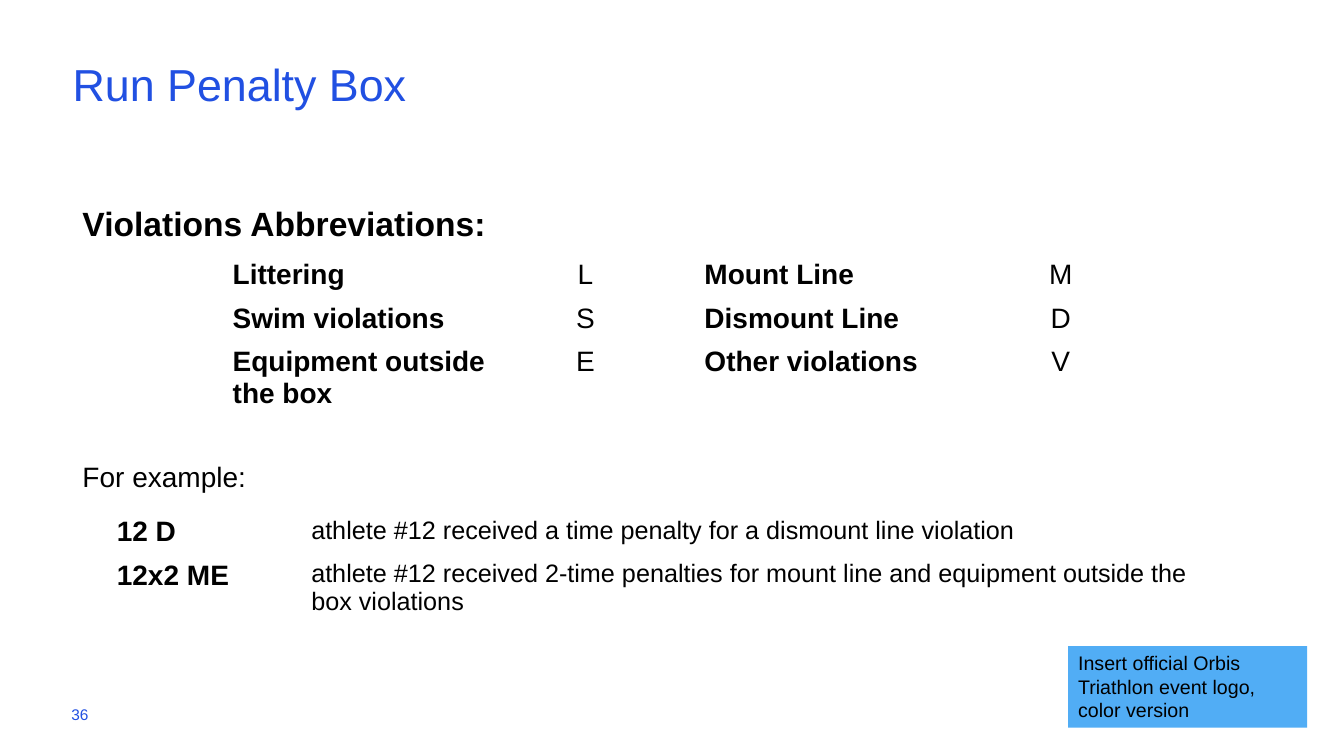
from dataclasses import dataclass

from pptx import Presentation
from pptx.dml.color import RGBColor
from pptx.enum.shapes import MSO_SHAPE
from pptx.enum.text import MSO_ANCHOR, PP_ALIGN
from pptx.util import Cm, Pt

BLUE = RGBColor(0x21, 0x50, 0xE2)
SKY = RGBColor(0x51, 0xAD, 0xF5)
BLACK = RGBColor(0, 0, 0)
FONT = "Arial"
TOP, MIDDLE = MSO_ANCHOR.TOP, MSO_ANCHOR.MIDDLE
LEFT, CENTER = PP_ALIGN.LEFT, PP_ALIGN.CENTER
RECT = MSO_SHAPE.RECTANGLE


@dataclass
class Style:
    size: float
    color: RGBColor = BLACK
    bold: bool = False
    align: PP_ALIGN = LEFT
    line_spacing: float = 1.0
    space_before: float = 0


@dataclass
class Box:
    left: float
    top: float
    width: float
    height: float
    paragraphs: list[tuple[str, Style]]
    anchor: MSO_ANCHOR = TOP
    inset: float = 0.25
    fill: RGBColor | None = None


@dataclass
class Grid:
    left: float
    top: float
    widths: list[float]
    heights: list[float]
    styles: list[Style]
    rows: list[list[str]]


def write(p, text: str, style: Style) -> None:
    p.text = text
    p.alignment = style.align
    p.line_spacing = style.line_spacing
    p.space_before = Pt(style.space_before)
    p.font.name = FONT
    p.font.size = Pt(style.size)
    p.font.bold = style.bold
    p.font.color.rgb = style.color


def add_box(s, box: Box) -> None:
    frame = [Cm(v) for v in (box.left, box.top, box.width, box.height)]
    if box.fill is None:
        sp = s.shapes.add_textbox(*frame)
    else:
        sp = s.shapes.add_shape(RECT, *frame)
        sp.shadow.inherit = False
        sp.fill.solid()
        sp.fill.fore_color.rgb = box.fill
        sp.line.fill.background()
    tf = sp.text_frame
    tf.word_wrap = True
    tf.vertical_anchor = box.anchor
    tf.margin_left = Cm(box.inset)
    for i, (text, style) in enumerate(box.paragraphs):
        write(tf.add_paragraph() if i else tf.paragraphs[0], text, style)


def add_grid(s, grid: Grid) -> None:
    table = s.shapes.add_table(
        len(grid.heights), len(grid.widths), Cm(grid.left), Cm(grid.top),
        Cm(sum(grid.widths)), Cm(sum(grid.heights))).table
    table.first_row = table.horz_banding = False
    for column, width in zip(table.columns, grid.widths):
        column.width = Cm(width)
    for row, height, texts in zip(table.rows, grid.heights, grid.rows):
        row.height = Cm(height)
        for cell, text, style in zip(row.cells, texts, grid.styles):
            cell.fill.background()
            write(cell.text_frame.paragraphs[0], text, style)


TERM = Style(20, bold=True)
LETTER = Style(20, align=CENTER)
LOGO_NOTE = Style(14)

BOXES = [
    # Title
    Box(1.83, 0.66, 29.21, 2.9, [("Run Penalty Box", Style(32, BLUE))], MIDDLE, 0),
    # Headings of the two tables
    Box(1.83, 4.57, 30.73, 7.92, [
        ("Violations Abbreviations:", Style(24, bold=True, line_spacing=1.4)),
        ("For example:", Style(20, line_spacing=1.4, space_before=145)),
    ]),
    # Slide number
    Box(1.8, 17.48, 7.62, 1.02, [("36", Style(11, BLUE))], MIDDLE, 0),
    # Space for the event logo
    Box(26.92, 16.28, 6.02, 2.06, [
        ("Insert official Orbis Triathlon event logo,", LOGO_NOTE),
        ("color version", LOGO_NOTE),
    ], fill=SKY),
]

GRIDS = [
    # Abbreviations
    Grid(5.61, 6.4, [7.52, 3.25, 1.12, 7.77, 2.92], [1.04] * 3,
         [TERM, LETTER, LETTER, TERM, LETTER], [
             ["Littering", "L", "", "Mount Line", "M"],
             ["Swim violations", "S", "", "Dismount Line", "D"],
             ["Equipment outside the box", "E", "", "Other violations", "V"],
         ]),
    # Examples
    Grid(2.69, 12.88, [4.9, 23.62], [0.81, 1.04], [TERM, Style(18)], [
        ["12 D", "athlete #12 received a time penalty for a dismount line violation"],
        ["12x2 ME", "athlete #12 received 2-time penalties for mount line and "
                    "equipment outside the box violations"],
    ]),
]


def main() -> None:
    prs = Presentation()
    prs.slide_width, prs.slide_height = Cm(33.87), Cm(19.05)
    s = prs.slides.add_slide(prs.slide_layouts[6])
    for box in BOXES:
        add_box(s, box)
    for grid in GRIDS:
        add_grid(s, grid)
    prs.save("out.pptx")


if __name__ == "__main__":
    main()
